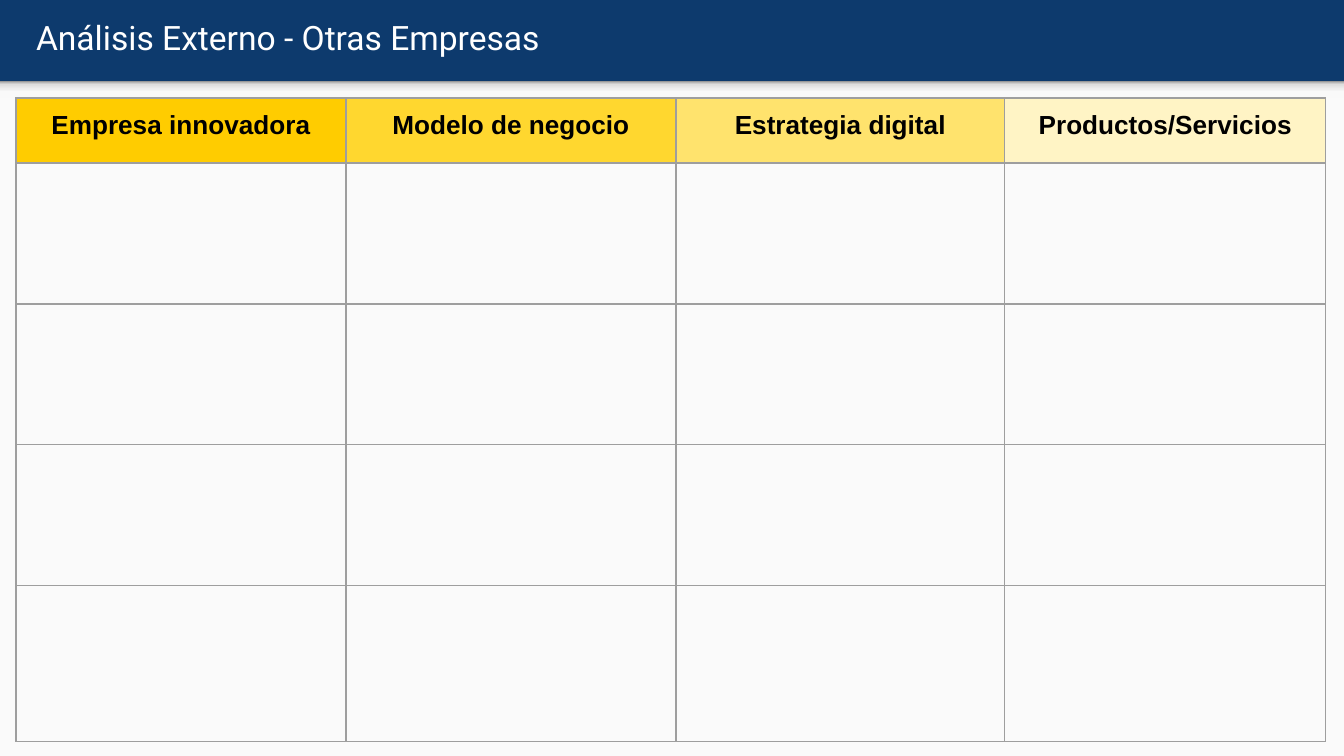
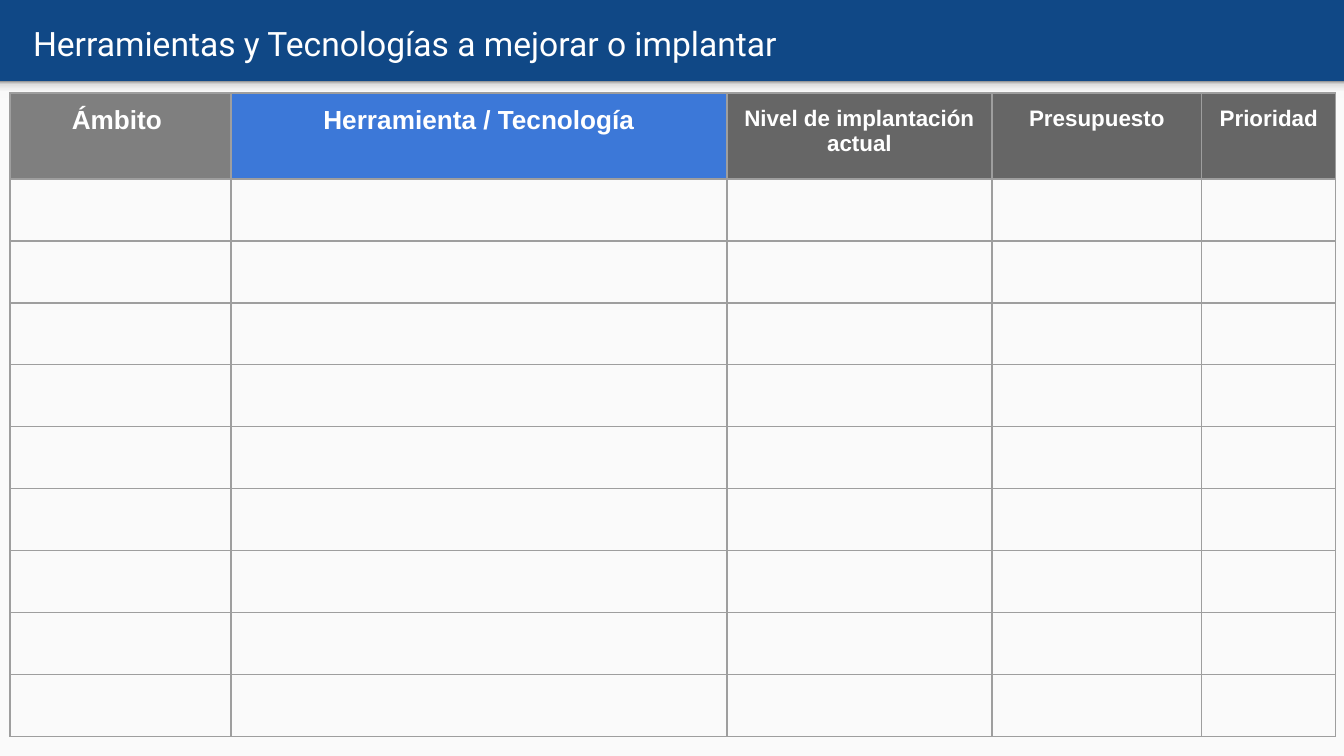
"""Build two worksheet slides: an external analysis grid and a technology plan."""
from copy import deepcopy

from lxml import etree
from pptx import Presentation
from pptx import util as u
from pptx.dml.color import RGBColor
from pptx.enum import shapes, text
from pptx.oxml import parse_xml
from pptx.oxml.ns import nsdecls, qn

WIDTH, HEIGHT = 1344, 756
SCALE = u.Inches(10) / WIDTH
INSET = 13
NAVY = RGBColor(0x0D, 0x3A, 0x6D)
BLUE = RGBColor(0x10, 0x48, 0x86)
SKY = RGBColor(0x3C, 0x78, 0xD8)
PAPER = RGBColor(0xFA, 0xFA, 0xFA)
WHITE = RGBColor(0xFF, 0xFF, 0xFF)
BLACK = RGBColor(0x00, 0x00, 0x00)
GRID = RGBColor(0x9E, 0x9E, 0x9E)
GREY = RGBColor(0x7F, 0x7F, 0x7F)
DARK_GREY = RGBColor(0x66, 0x66, 0x66)
GOLDS = [RGBColor(0xFF, 0xCC, 0x00), RGBColor(0xFF, 0xD7, 0x2F),
         RGBColor(0xFF, 0xE3, 0x6D), RGBColor(0xFF, 0xF4, 0xC5)]
SHADE = [(0, RGBColor(0xF9, 0xF9, 0xF9)), (0.36, RGBColor(0xF9, 0xF9, 0xF9)),
         (0.8, RGBColor(0xDE, 0xDE, 0xDE)), (1, RGBColor(0x99, 0x99, 0x99))]

SLIDES = [
    {
        "title": "Análisis Externo - Otras Empresas",
        "title_box": (23, 0, 579, 74),
        "band": NAVY,
        "corner": (16, 98),
        "columns": [330, 330, 329, 321],
        "rows": [65, 141, 141, 141, 156],
        "ink": BLACK,
        "headers": [("Empresa innovadora", 14, GOLDS[0]),
                    ("Modelo de negocio", 14, GOLDS[1]),
                    ("Estrategia digital", 14, GOLDS[2]),
                    ("Productos/Servicios", 14, GOLDS[3])],
    },
    {
        "title": "Herramientas y Tecnologías a mejorar o implantar",
        "title_box": (20, 6, 789, 74),
        "band": BLUE,
        "corner": (10, 93),
        "columns": [221, 496, 265, 210, 134],
        "rows": [86] + [62] * 9,
        "ink": WHITE,
        "headers": [("Ámbito ", 14, GREY),
                    ("Herramienta / Tecnología", 14, SKY),
                    ("Nivel de implantación actual", 12, DARK_GREY),
                    ("Presupuesto", 12, DARK_GREY),
                    ("Prioridad", 12, DARK_GREY)],
    },
]


def px(*lengths):
    return [u.Emu(round(length * SCALE)) for length in lengths]


def add_borders(cell):
    properties = cell._tc.get_or_add_tcPr()
    for position, side in enumerate(("lnL", "lnR", "lnT", "lnB")):
        line = parse_xml(f'<a:{side} {nsdecls("a")} w="{u.Pt(0.75)}"><a:solidFill>'
                         f'<a:srgbClr val="{GRID}"/></a:solidFill></a:{side}>')
        properties.insert(position, line)


deck = Presentation()
deck.slide_width, deck.slide_height = px(WIDTH, HEIGHT)

for content in SLIDES:
    page = deck.slides.add_slide(deck.slide_layouts[5])
    page.background.fill.solid()
    page.background.fill.fore_color.rgb = content["band"]

    panel = page.shapes.add_shape(shapes.MSO_SHAPE.RECTANGLE, *px(0, 93, WIDTH, HEIGHT - 93))
    panel.fill.solid()
    panel.fill.fore_color.rgb = PAPER
    strip = page.shapes.add_shape(shapes.MSO_SHAPE.RECTANGLE, *px(0, 81, WIDTH, 17))
    strip.fill.gradient()
    strip.fill.gradient_angle = 90
    stop_list = strip._element.spPr.find(".//" + qn("a:gsLst"))
    for _ in range(len(SHADE) - len(stop_list)):
        stop_list.append(deepcopy(stop_list[0]))
    for stop, (position, color) in zip(strip.fill.gradient_stops, SHADE):
        stop.position = position
        stop.color.rgb = color
    for shape in (panel, strip):
        shape.line.fill.background()
        shape.shadow.inherit = False

    title = page.shapes.title
    title.left, title.top, title.width, title.height = px(*content["title_box"])
    frame = title.text_frame
    frame.text = content["title"]
    frame.auto_size = text.MSO_AUTO_SIZE.NONE
    frame.vertical_anchor = text.MSO_ANCHOR.MIDDLE
    frame.margin_left, frame.margin_top, frame.margin_right, frame.margin_bottom = px(*[INSET] * 4)
    para = frame.paragraphs[0]
    para.alignment = text.PP_ALIGN.LEFT
    para.font.name = "Roboto"
    para.font.size = u.Pt(18)
    para.font.color.rgb = WHITE

    columns, rows = content["columns"], content["rows"]
    table = page.shapes.add_table(len(rows), len(columns),
                                  *px(*content["corner"], sum(columns), sum(rows))).table
    table.first_row = table.horz_banding = False
    for column, width in zip(table.columns, columns):
        column.width, = px(width)
    for row, height in zip(table.rows, rows):
        row.height, = px(height)
    for cell in table.iter_cells():
        cell.margin_left, cell.margin_top, cell.margin_right, cell.margin_bottom = px(*[INSET] * 4)
        cell.fill.background()
        cell.text_frame.paragraphs[0].font.size = u.Pt(14)
        add_borders(cell)
    for cell, (label, size, color) in zip(table.rows[0].cells, content["headers"]):
        cell.text = label
        cell.fill.solid()
        cell.fill.fore_color.rgb = color
        para = cell.text_frame.paragraphs[0]
        para.alignment = text.PP_ALIGN.CENTER
        para.font.name = "Arial"
        para.font.size = u.Pt(size)
        para.font.bold = True
        para.font.color.rgb = content["ink"]

deck.save("out.pptx")
